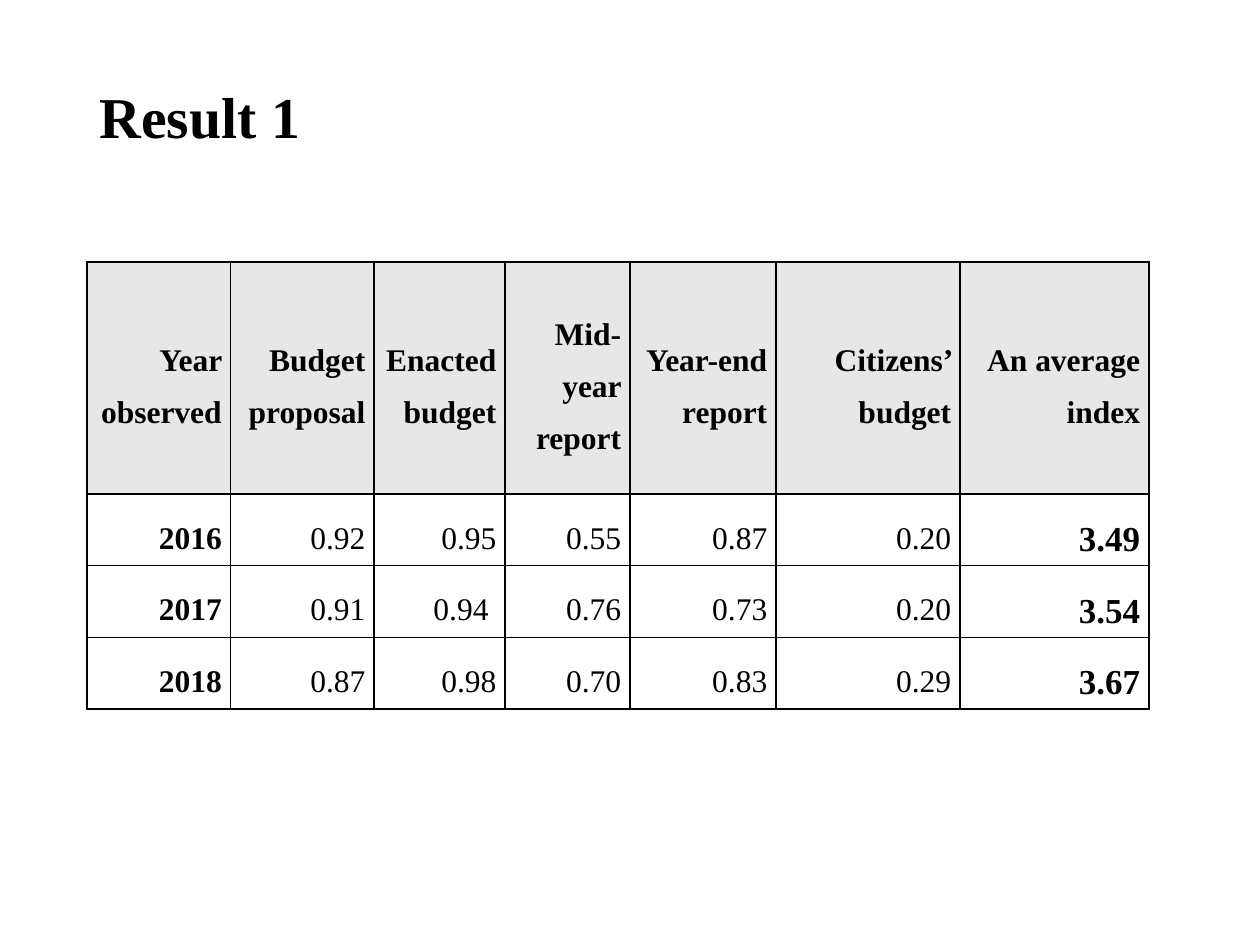
import dataclasses

import lxml.etree
import pptx
import pptx.dml.color
import pptx.enum.text
import pptx.oxml.ns
import pptx.table
import pptx.text.text
import pptx.util

INK = "000000"
HEADER_FILL = "E7E7E7"
FONT = "Times New Roman"
LEFT = 0.69
COLUMN_WIDTHS = (1.14, 1.14, 1.04, 0.99, 1.16, 1.46, 1.5)
HEADER_HEIGHT = 1.84
ROW_HEIGHT = 0.57


@dataclasses.dataclass(frozen=True)
class TextStyle:
    size: float
    bold: bool
    line_spacing: float = 1.5
    align: pptx.enum.text.PP_ALIGN = pptx.enum.text.PP_ALIGN.RIGHT


TITLE = TextStyle(33, True, 0.9, pptx.enum.text.PP_ALIGN.LEFT)
LABEL = TextStyle(18, True)
VALUE = TextStyle(18, False)
TOTAL = TextStyle(20, True)

HEADERS = (
    "Year observed", "Budget proposal", "Enacted budget", "Mid-year report",
    "Year-end report", "Citizens’ budget", "An average index",
)
RESULTS = (
    ("2016", "0.92", "0.95", "0.55", "0.87", "0.20", "3.49"),
    ("2017", "0.91", "0.94 ", "0.76", "0.73", "0.20", "3.54"),
    ("2018", "0.87", "0.98", "0.70", "0.83", "0.29", "3.67"),
)
ROW_STYLES = (LABEL,) + (VALUE,) * 5 + (TOTAL,)


def color(value: str) -> pptx.dml.color.RGBColor:
    return pptx.dml.color.RGBColor.from_string(value)


def write(frame: pptx.text.text.TextFrame, text: str, style: TextStyle) -> None:
    frame.text = text
    frame.word_wrap = True
    paragraph = frame.paragraphs[0]
    paragraph.alignment = style.align
    paragraph.line_spacing = style.line_spacing
    paragraph.font.name = FONT
    paragraph.font.size = pptx.util.Pt(style.size)
    paragraph.font.bold = style.bold
    paragraph.font.color.rgb = color(INK)


def add_borders(cell: pptx.table._Cell) -> None:
    properties = cell._tc.get_or_add_tcPr()
    name = pptx.oxml.ns.qn
    for position, side in enumerate(("lnL", "lnR", "lnT", "lnB")):
        line = lxml.etree.Element(name(f"a:{side}"), w=str(pptx.util.Pt(1)))
        fill = lxml.etree.SubElement(line, name("a:solidFill"))
        lxml.etree.SubElement(fill, name("a:srgbClr"), val=INK)
        properties.insert(position, line)


def fill_cell(cell: pptx.table._Cell, text: str, style: TextStyle, fill: str | None) -> None:
    write(cell.text_frame, text, style)
    cell.vertical_anchor = pptx.enum.text.MSO_ANCHOR.MIDDLE
    cell.margin_left = cell.margin_right = pptx.util.Inches(0.07)
    cell.margin_top = cell.margin_bottom = 0
    if fill:
        cell.fill.solid()
        cell.fill.fore_color.rgb = color(fill)
    else:
        cell.fill.background()
    add_borders(cell)


def main() -> None:
    inches = pptx.util.Inches
    deck = pptx.Presentation()
    deck.slide_width, deck.slide_height = inches(10), inches(7.5)
    page = deck.slides.add_slide(deck.slide_layouts[5])

    title = page.shapes.title
    title.left, title.top = inches(LEFT), inches(0.48)
    title.width, title.height = inches(10 - 2 * LEFT), inches(0.94)
    write(title.text_frame, "Result 1", TITLE)
    title.text_frame.vertical_anchor = pptx.enum.text.MSO_ANCHOR.MIDDLE
    title.text_frame.auto_size = pptx.enum.text.MSO_AUTO_SIZE.NONE

    row_heights = (HEADER_HEIGHT,) + (ROW_HEIGHT,) * len(RESULTS)
    table = page.shapes.add_table(
        len(row_heights), len(COLUMN_WIDTHS), inches(LEFT), inches(2.08),
        inches(sum(COLUMN_WIDTHS)), inches(sum(row_heights)),
    ).table
    table.first_row = table.horz_banding = False
    for column, width in zip(table.columns, COLUMN_WIDTHS):
        column.width = inches(width)
    for row, height in zip(table.rows, row_heights):
        row.height = inches(height)

    for column, text in enumerate(HEADERS):
        fill_cell(table.cell(0, column), text, LABEL, HEADER_FILL)
    for row, values in enumerate(RESULTS, start=1):
        for column, (text, style) in enumerate(zip(values, ROW_STYLES)):
            fill_cell(table.cell(row, column), text, style, None)

    deck.save("out.pptx")


if __name__ == "__main__":
    main()
